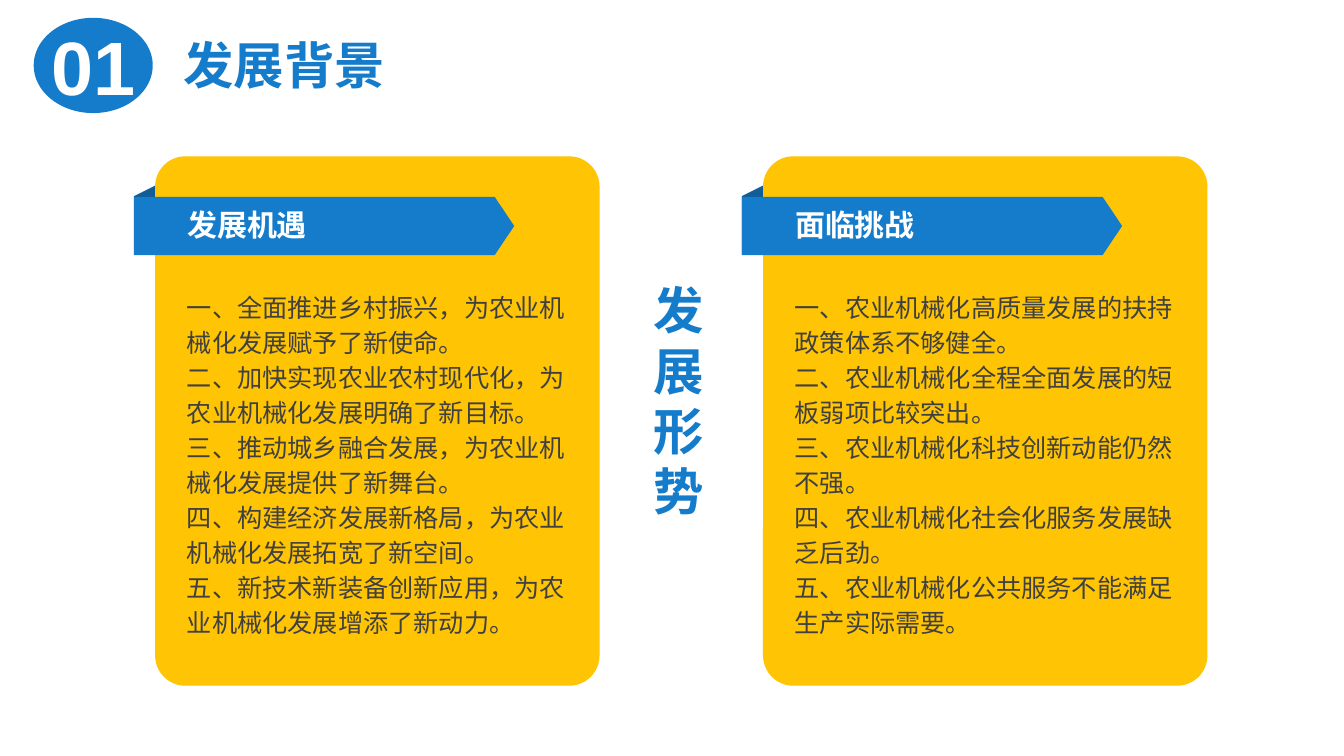
"""Build the slide on the development background: opportunities and challenges."""
from lxml import etree
from pptx import Presentation
from pptx.dml.color import RGBColor
from pptx.enum.shapes import MSO_SHAPE
from pptx.enum.text import MSO_ANCHOR, PP_ALIGN
from pptx.oxml.ns import qn
from pptx.util import Cm, Pt

OVAL = MSO_SHAPE.OVAL
CARD = MSO_SHAPE.ROUNDED_RECTANGLE
RIBBON = MSO_SHAPE.PENTAGON
FOLD = MSO_SHAPE.FLOWCHART_DATA
MIDDLE = MSO_ANCHOR.MIDDLE
CENTER = PP_ALIGN.CENTER

BLUE, DARK_BLUE, YELLOW = "157CCB", "105D98", "FFC404"
WHITE, GREY = "FFFFFF", "404040"
CHINESE = "Noto Sans CJK SC"
CARD_PITCH = 15.32

PANELS = [
    ("发展机遇", [
        "一、全面推进乡村振兴，为农业机械化发展赋予了新使命。",
        "二、加快实现农业农村现代化，为农业机械化发展明确了新目标。",
        "三、推动城乡融合发展，为农业机械化发展提供了新舞台。",
        "四、构建经济发展新格局，为农业机械化发展拓宽了新空间。",
        "五、新技术新装备创新应用，为农业机械化发展增添了新动力。",
    ]),
    ("面临挑战", [
        "一、农业机械化高质量发展的扶持政策体系不够健全。",
        "二、农业机械化全程全面发展的短板弱项比较突出。",
        "三、农业机械化科技创新动能仍然不强。",
        "四、农业机械化社会化服务发展缺乏后劲。",
        "五、农业机械化公共服务不能满足生产实际需要。",
    ]),
]

deck = Presentation()
deck.slide_width, deck.slide_height = Cm(33.87), Cm(19.05)
page = deck.slides.add_slide(deck.slide_layouts[6])


def add_filled(kind, left, top, width, height, color):
    shape = page.shapes.add_shape(kind, Cm(left), Cm(top), Cm(width), Cm(height))
    shape.shadow.inherit = False
    shape.fill.solid()
    shape.fill.fore_color.rgb = RGBColor.from_string(color)
    shape.line.fill.background()
    return shape


def write(box, lines, size, color, bold=True, font=CHINESE, spacing=None, inset=True):
    frame = box.text_frame
    frame.word_wrap = True
    if not inset:
        frame.margin_left = frame.margin_right = frame.margin_top = frame.margin_bottom = 0
    frame.text = "\n".join(lines)
    for para in frame.paragraphs:
        para.line_spacing = spacing
        para.font.size = Pt(size)
        para.font.bold = bold
        para.font.color.rgb = RGBColor.from_string(color)
        para.font.name = font
        defaults = para._p.pPr.find(qn("a:defRPr"))
        etree.SubElement(defaults, qn("a:ea")).set("typeface", font)


number = add_filled(OVAL, 0.85, 0.45, 3, 2.4, BLUE)
write(number, ["01"], 54, WHITE, font="Arial", inset=False)
number.text_frame.word_wrap = False
number.text_frame.vertical_anchor = MIDDLE
number.text_frame.paragraphs[0].alignment = CENTER

title = page.shapes.add_textbox(Cm(4.37), Cm(0.74), Cm(9.86), Cm(1.8))
write(title, ["发展背景"], 36, BLUE)

for index, (heading, points) in enumerate(PANELS):
    shift = index * CARD_PITCH
    fold = add_filled(FOLD, 2.82 + shift, 5.13, 1.85, 0.74, DARK_BLUE)
    fold.rotation = 270
    fold.element.spPr.find(qn("a:xfrm")).set("flipH", "1")
    card = add_filled(CARD, 3.91 + shift, 3.94, 11.2, 13.34, YELLOW)
    card.adjustments[0] = 0.068
    ribbon = add_filled(RIBBON, 3.38 + shift, 4.96, 9.58, 1.47, BLUE)
    ribbon.adjustments[0] = 0.335

    label = page.shapes.add_textbox(Cm(4.72 + shift), Cm(5.21), Cm(6.3), Cm(0.91))
    write(label, [heading], 21.4, WHITE, inset=False)
    body = page.shapes.add_textbox(Cm(4.71 + shift), Cm(7.25), Cm(9.8), Cm(9.25))
    write(body, points, 18, GREY, bold=False, spacing=Pt(25), inset=False)

situation = page.shapes.add_textbox(Cm(16.21), Cm(6.91), Cm(1.96), Cm(6.32))
write(situation, ["发展形势"], 36, BLUE)

deck.save("out.pptx")
